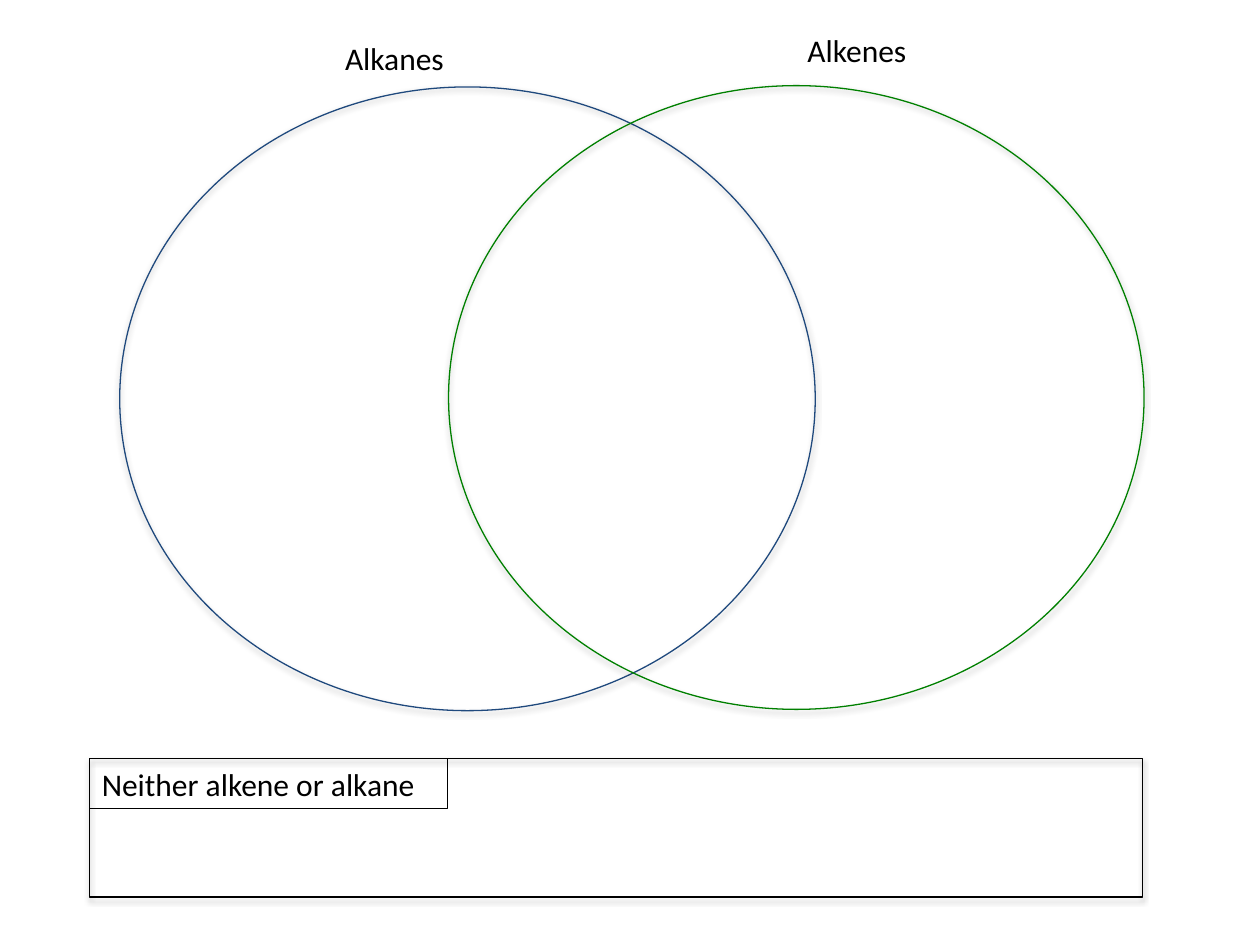
from lxml import etree
from pptx import Presentation
from pptx.dml.color import RGBColor
from pptx.enum import shapes, text
from pptx.oxml.ns import qn
from pptx.util import Inches, Pt

BLACK = RGBColor(0x00, 0x00, 0x00)
NAVY = RGBColor(0x1F, 0x49, 0x7D)
GREEN = RGBColor(0x00, 0x80, 0x00)

LABEL_HEIGHT = 0.4


def add_soft_shadow(shape):
    """Put a faint black shadow straight below the shape."""
    effects = shape._element.spPr.find(qn("a:effectLst"))
    shadow = etree.SubElement(
        effects, qn("a:outerShdw"), blurRad=str(Pt(3.1)), dist=str(Pt(1.8)),
        dir=str(90 * 60000), rotWithShape="0")
    color = etree.SubElement(shadow, qn("a:srgbClr"), val=str(BLACK))
    etree.SubElement(color, qn("a:alpha"), val="35000")


def add_outline(parent, kind, box, color):
    """Add an unfilled, shadowed shape with a thin line."""
    shape = parent.shapes.add_shape(kind, *map(Inches, box))
    shape.fill.background()
    shape.line.color.rgb = color
    shape.line.width = Pt(0.75)
    shape.shadow.inherit = False
    add_soft_shadow(shape)
    return shape


def add_text(slide, content, box, size=18, font="Calibri", color=BLACK, border=None):
    label = slide.shapes.add_textbox(*map(Inches, box))
    frame = label.text_frame
    frame.word_wrap = True
    frame.auto_size = text.MSO_AUTO_SIZE.SHAPE_TO_FIT_TEXT
    run = frame.paragraphs[0].add_run()
    run.text = content
    run.font.size = Pt(size)
    run.font.name = font
    run.font.color.rgb = color
    if border is not None:
        label.line.color.rgb = border
        label.line.width = Pt(0.75)
    return label


def add_venn(slide, left, top, width, height):
    """Two overlapping ellipses, each with its label above."""
    ellipse_width, ellipse_height = 5.52, height - 0.01
    sets = [
        # name, ellipse offset, colour, label offset
        ("Alkanes", (0, 0.01), NAVY, (1.69, -0.42)),
        ("Alkenes", (width - ellipse_width, 0), GREEN, (5.36, -0.48)),
    ]
    group = slide.shapes.add_group_shape()
    for name, (dx, dy), color, (label_dx, label_dy) in sets:
        add_outline(group, shapes.MSO_SHAPE.OVAL,
                    (left + dx, top + dy, ellipse_width, ellipse_height), color)
        add_text(slide, name, (left + label_dx, top + label_dy, 1.94, LABEL_HEIGHT))


def add_neither_box(slide, left, top, width, height):
    """Box for the rest, with a bordered heading in its corner."""
    add_outline(slide, shapes.MSO_SHAPE.RECTANGLE, (left, top, width, height), BLACK)
    add_text(slide, "Neither alkene or alkane", (left, top, 2.84, LABEL_HEIGHT),
             border=BLACK)


def main():
    presentation = Presentation()
    presentation.slide_width = Inches(10)
    presentation.slide_height = Inches(7.5)
    slide = presentation.slides.add_slide(presentation.slide_layouts[6])
    add_venn(slide, 0.95, 0.68, 8.13, 4.96)
    add_neither_box(slide, 0.71, 6.02, 8.36, 1.1)
    presentation.save("out.pptx")


if __name__ == "__main__":
    main()
